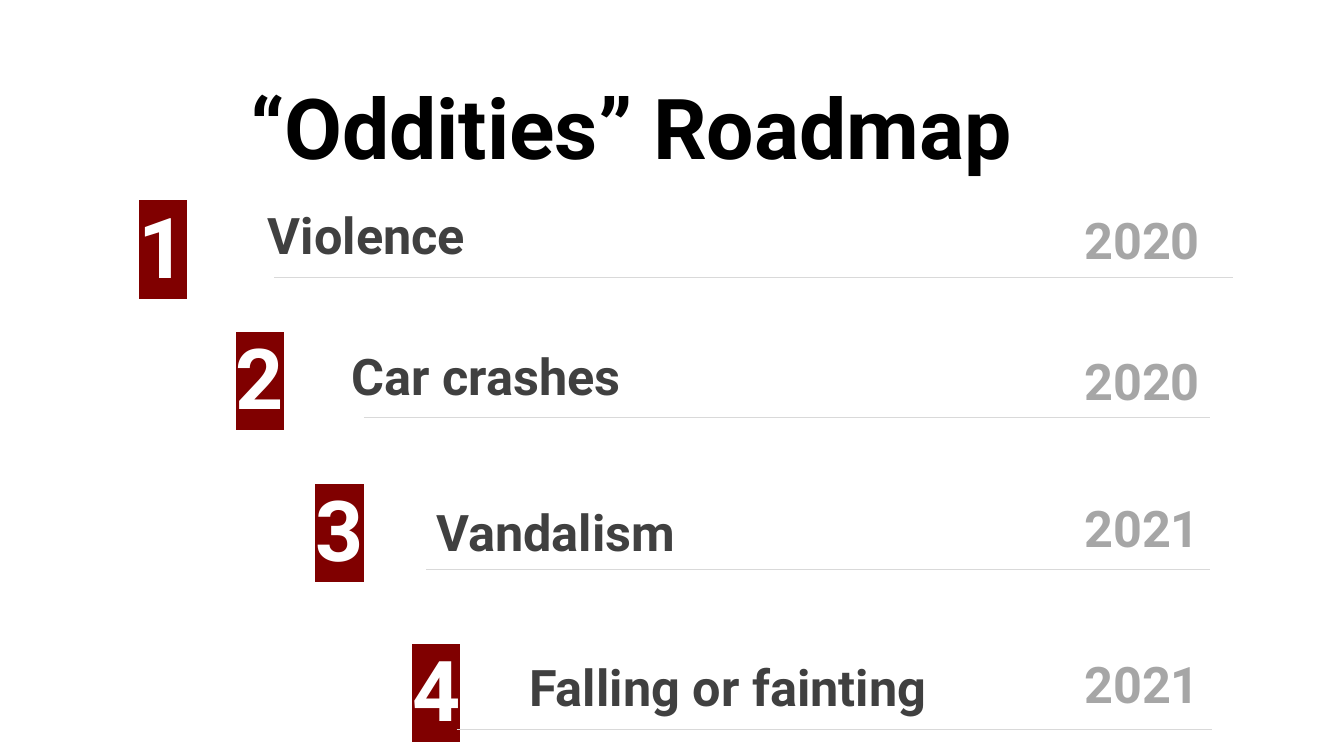
from dataclasses import dataclass

import pptx
import pptx.dml.color
import pptx.enum.shapes
import pptx.enum.text
import pptx.oxml
import pptx.oxml.ns
import pptx.util
from pptx.util import Inches

ALIGN = pptx.enum.text.PP_ALIGN


@dataclass(frozen=True)
class Theme:
    font: str = "Roboto"
    title: str = "000000"
    number: str = "FFFFFF"
    number_back: str = "800000"
    label: str = "404040"
    year: str = "A6A6A6"
    rule: str = "D9D9D9"
    large: int = 60
    medium: int = 36
    rule_width: float = 0.5
    line_spacing: float = 1.2


@dataclass(frozen=True)
class Box:
    left: float
    top: float
    width: float
    height: float

    @property
    def right(self):
        return self.left + self.width


@dataclass(frozen=True)
class Oddity:
    name: str
    year: str
    left: float
    top: float
    label_dx: float
    label_dy: float
    label_width: float
    year_dy: float
    rule_dx: float
    rule_dy: float
    rule_overhang: float


THEME = Theme()
ROWS_RIGHT = 12
ROW_HEIGHT = 1.22
NUMBER_WIDTH = 0.96
YEAR_WIDTH = 1.85
ODDITIES = [
    Oddity("Violence", "2020", 1.28, 1.68, 1.28, 0.18, 3.56, 0.23, 1.44, 1.07, 0.23),
    Oddity("Car crashes", "2020", 2.24, 2.98, 1.15, 0.28, 3.56, 0.32, 1.37, 1.16, 0),
    Oddity("Vandalism", "2021", 3.03, 4.49, 1.2, 0.31, 3.56, 0.27, 1.2, 1.16, 0),
    Oddity("Falling or fainting", "2021", 3.99, 6.08, 1.16, 0.26, 5.18, 0.23, 0.54, 1.16, 0.02),
]


def rgb(color):
    return pptx.dml.color.RGBColor.from_string(color)


def add_text(slide, box, text, size, color, align=ALIGN.LEFT, highlight=None):
    frame = slide.shapes.add_textbox(
        Inches(box.left), Inches(box.top), Inches(box.width), Inches(box.height)
    ).text_frame
    frame.word_wrap = True
    frame.auto_size = pptx.enum.text.MSO_AUTO_SIZE.SHAPE_TO_FIT_TEXT
    paragraph = frame.paragraphs[0]
    paragraph.alignment = align
    paragraph.line_spacing = THEME.line_spacing
    run = paragraph.add_run()
    run.text = text
    run.font.name = THEME.font
    run.font.size = pptx.util.Pt(size)
    run.font.bold = True
    run.font.color.rgb = rgb(color)
    if highlight:
        mark = pptx.oxml.parse_xml(
            f'<a:highlight {pptx.oxml.ns.nsdecls("a")}><a:srgbClr val="{highlight}"/></a:highlight>'
        )
        fill = run.font._element.find(pptx.oxml.ns.qn("a:solidFill"))
        fill.addnext(mark)


def add_rule(slide, left, right, y):
    rule = slide.shapes.add_connector(
        pptx.enum.shapes.MSO_CONNECTOR.STRAIGHT,
        Inches(left), Inches(y), Inches(right), Inches(y),
    )
    rule.line.color.rgb = rgb(THEME.rule)
    rule.line.width = pptx.util.Pt(THEME.rule_width)
    rule._element.spPr.append(
        pptx.oxml.parse_xml(f'<a:effectLst {pptx.oxml.ns.nsdecls("a")}/>')
    )


def add_title(slide, box):
    add_text(slide, box, "“Oddities” Roadmap", THEME.large, THEME.title, ALIGN.CENTER)


def add_oddity(slide, box, number, oddity):
    number_box = Box(box.left, box.top, NUMBER_WIDTH, box.height)
    label_box = Box(box.left + oddity.label_dx, box.top + oddity.label_dy, oddity.label_width, 0.76)
    year_box = Box(box.right - YEAR_WIDTH, box.top + oddity.year_dy, YEAR_WIDTH, 0.77)
    add_text(slide, number_box, str(number), THEME.large, THEME.number, highlight=THEME.number_back)
    add_text(slide, label_box, oddity.name, THEME.medium, THEME.label)
    add_text(slide, year_box, oddity.year, THEME.medium, THEME.year, ALIGN.RIGHT)
    add_rule(
        slide, box.left + oddity.rule_dx, box.right + oddity.rule_overhang, box.top + oddity.rule_dy
    )


def main():
    presentation = pptx.Presentation()
    presentation.slide_width = Inches(13.33)
    presentation.slide_height = Inches(7.5)
    slide = presentation.slides.add_slide(presentation.slide_layouts[6])
    add_title(slide, Box(1.8, 0.5, 8.92, 1.22))
    for number, oddity in enumerate(ODDITIES, 1):
        row = Box(oddity.left, oddity.top, ROWS_RIGHT - oddity.left, ROW_HEIGHT)
        add_oddity(slide, row, number, oddity)
    presentation.save("out.pptx")


if __name__ == "__main__":
    main()
